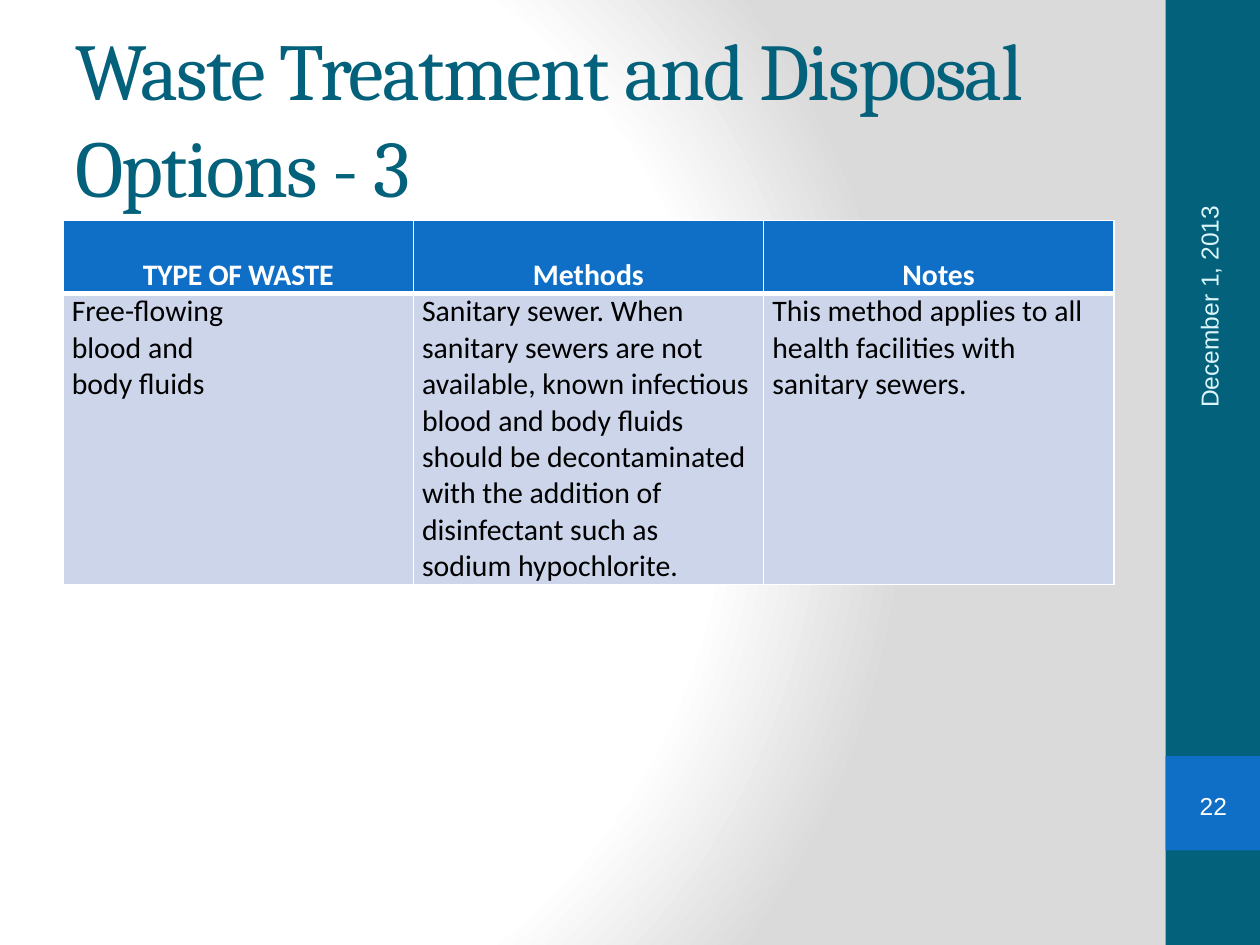
from dataclasses import dataclass

from lxml.etree import SubElement
from pptx import Presentation
from pptx.dml.color import RGBColor
from pptx.enum.shapes import MSO_SHAPE as Preset
from pptx.enum.text import MSO_ANCHOR as Anchor, PP_ALIGN as Align
from pptx.oxml.ns import qn
from pptx.util import Inches, Pt


@dataclass(frozen=True)
class Theme:
    teal: str = "04617B"
    blue: str = "0F6FC6"
    pale: str = "DBF5F9"
    cell: str = "CCD5EA"
    white: str = "FFFFFF"
    gray: str = "DADADA"
    black: str = "000000"
    title_size: float = 46
    table_size: float = 17
    label_size: float = 14


THEME = Theme()


@dataclass(frozen=True)
class TextStyle:
    font: str
    size: float
    color: str
    bold: bool = False
    tracking: float = 0  # points


TITLE = TextStyle("Cambria", THEME.title_size, THEME.teal, tracking=-1)
DATE = TextStyle("Arial", THEME.label_size, THEME.pale)
NUMBER = TextStyle("Arial", THEME.label_size, THEME.white)
HEADER = TextStyle("Calibri", THEME.table_size, THEME.white, bold=True)
TIGHT_HEADER = TextStyle("Calibri", THEME.table_size, THEME.white, bold=True, tracking=-0.2)
BODY = TextStyle("Calibri", THEME.table_size, THEME.black)


@dataclass(frozen=True)
class Column:
    heading: str
    heading_style: TextStyle
    lines: tuple[str, ...]


COLUMNS = (
    Column("TYPE OF WASTE", TIGHT_HEADER, ("Free-flowing", "blood and", "body fluids")),
    Column("Methods", HEADER, (
        "Sanitary sewer. When sanitary sewers are not available, known infectious "
        "blood and body fluids should be decontaminated with the addition of "
        "disinfectant such as sodium hypochlorite.",)),
    Column("Notes", HEADER, (
        "This method applies to all health facilities with sanitary sewers.",)),
)


def write(frame, lines: tuple[str, ...], style: TextStyle,
          align=Align.LEFT, spacing: float = 1.0) -> None:
    for index, line in enumerate(lines):
        para = frame.paragraphs[0] if index == 0 else frame.add_paragraph()
        para.alignment = align
        para.line_spacing = spacing
        span = para.add_run()
        span.text = line
        span.font.name = style.font
        span.font.size = Pt(style.size)
        span.font.bold = style.bold
        span.font.color.rgb = RGBColor.from_string(style.color)
        if style.tracking:
            span.font._element.set("spc", str(round(style.tracking * 100)))


def paint_background(page) -> None:
    """Fill the page with a circular gradient centred towards the left."""
    page.background.fill.gradient()
    gradient = page.element.find(".//" + qn("a:gradFill"))
    for child in list(gradient):
        gradient.remove(child)
    stops = SubElement(gradient, qn("a:gsLst"))
    for percent, color in ((0, THEME.white), (75, THEME.white), (100, THEME.gray)):
        stop = SubElement(stops, qn("a:gs"), pos=str(percent * 1000))
        SubElement(stop, qn("a:srgbClr"), val=color)
    circle = SubElement(gradient, qn("a:path"), {"path": "circle"})
    SubElement(circle, qn("a:fillToRect"), l="20000", t="50000", r="100000", b="50000")


def add_block(page, left: float, top: float, width: float, height: float, color: str) -> None:
    block = page.shapes.add_shape(
        Preset.RECTANGLE, Inches(left), Inches(top), Inches(width), Inches(height))
    block.shadow.inherit = False
    block.fill.solid()
    block.fill.fore_color.rgb = RGBColor.from_string(color)
    block.line.fill.background()


def add_label(page, left: float, top: float, width: float, height: float,
              text: str, style: TextStyle, rotation: float = 0) -> None:
    box = page.shapes.add_textbox(Inches(left), Inches(top), Inches(width), Inches(height))
    box.rotation = rotation
    box.text_frame.word_wrap = True
    box.text_frame.vertical_anchor = Anchor.MIDDLE
    write(box.text_frame, (text,), style)


def add_page_number(page, text: str) -> None:
    badge = page.shapes.add_shape(
        Preset.DOUBLE_BRACKET, Inches(9.33), Inches(6.18), Inches(0.6), Inches(0.43))
    badge.shadow.inherit = False
    badge.adjustments[0] = 0.18
    badge.fill.background()
    badge.line.fill.background()
    frame = badge.text_frame
    frame.margin_left = frame.margin_top = frame.margin_right = frame.margin_bottom = 0
    frame.vertical_anchor = Anchor.MIDDLE
    write(frame, (text,), NUMBER, Align.CENTER)


def style_cell(cell, fill: str, top_width: float, bottom_width: float) -> None:
    cell.margin_left = cell.margin_right = Inches(0.07)
    cell.margin_top = cell.margin_bottom = 0
    properties = cell._tc.get_or_add_tcPr()
    for side, width in (("L", 1), ("R", 1), ("T", top_width), ("B", bottom_width)):
        border = SubElement(properties, qn(f"a:ln{side}"), w=str(Pt(width)))
        solid = SubElement(border, qn("a:solidFill"))
        SubElement(solid, qn("a:srgbClr"), val=THEME.white)
    cell.fill.solid()
    cell.fill.fore_color.rgb = RGBColor.from_string(fill)


def add_waste_table(page, columns: tuple[Column, ...]) -> None:
    heading_height, body_height = Inches(0.58), Inches(2.31)
    column_width = Inches(2.78)
    table = page.shapes.add_table(
        2, len(columns), Inches(0.5), Inches(1.75),
        column_width * len(columns), heading_height + body_height).table
    table.rows[0].height, table.rows[1].height = heading_height, body_height
    for index, column in enumerate(columns):
        table.columns[index].width = column_width
        heading, body = table.cell(0, index), table.cell(1, index)
        style_cell(heading, THEME.blue, top_width=1, bottom_width=3)
        write(heading.text_frame, (column.heading,), column.heading_style, Align.CENTER, 2.0)
        style_cell(body, THEME.cell, top_width=3, bottom_width=1)
        write(body.text_frame, column.lines, BODY)


def main() -> None:
    deck = Presentation()
    deck.slide_width, deck.slide_height = Inches(10), Inches(7.5)
    page = deck.slides.add_slide(deck.slide_layouts[6])
    paint_background(page)
    add_block(page, 9.25, 0, 0.75, 7.5, THEME.teal)
    add_block(page, 9.25, 6, 0.75, 0.75, THEME.blue)
    add_label(page, 0.5, 0.3, 8.33, 1.25, "Waste Treatment and Disposal Options - 3", TITLE)
    add_waste_table(page, COLUMNS)
    add_label(page, 8.26, 1.8, 2.67, 0.4, "December 1, 2013", DATE, rotation=270)
    add_page_number(page, "22")
    deck.save("out.pptx")


if __name__ == "__main__":
    main()
